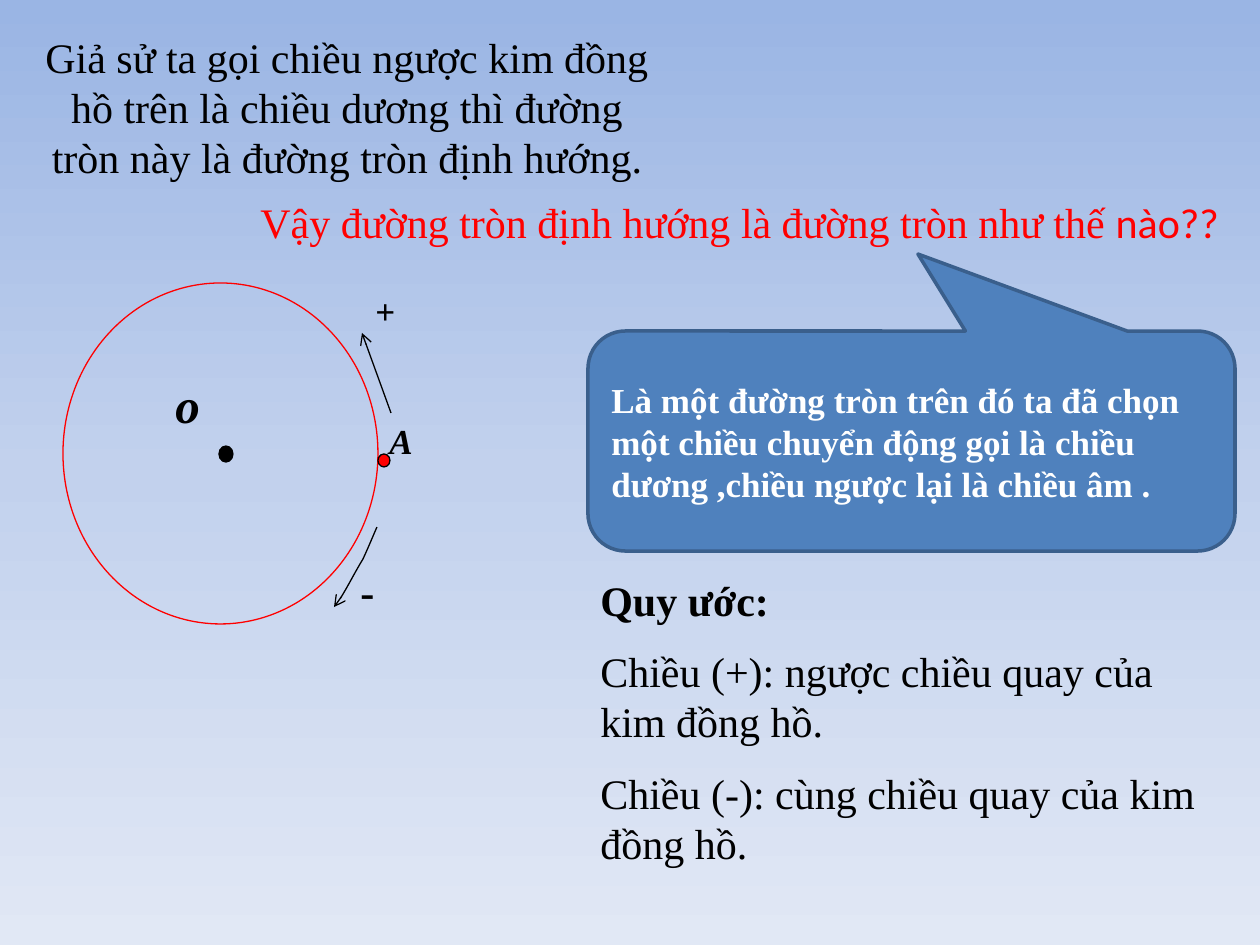
from copy import deepcopy

from pptx import Presentation
from pptx.dml.color import RGBColor
from pptx.enum.shapes import MSO_CONNECTOR, MSO_SHAPE as SHAPE
from pptx.enum.text import MSO_ANCHOR, PP_ALIGN as ALIGN
from pptx.oxml.ns import qn
from pptx.util import Emu, Pt
from lxml.etree import SubElement

SCALE = 914400 / 126  # EMU in one px
SERIF = "Times New Roman"


def color(hex_value):
    return RGBColor.from_string(hex_value)


def write(shape, paragraphs, align=ALIGN.LEFT):
    """Each paragraph is a list of runs: (text, size, color, bold, italic, font)."""
    frame = shape.text_frame
    frame.word_wrap = True
    for index, runs in enumerate(paragraphs):
        paragraph = frame.paragraphs[0] if index == 0 else frame.add_paragraph()
        paragraph.alignment = align
        if index:
            paragraph.space_before = Pt(runs[0][1] / 2)
        for text, size, hex_value, bold, italic, font_name in runs:
            run = paragraph.add_run()
            run.text = text
            run.font.size = Pt(size)
            run.font.name = font_name
            run.font.bold, run.font.italic = bold, italic
            run.font.color.rgb = color(hex_value)


presentation = Presentation()
presentation.slide_width = Emu(round(1260 * SCALE))
presentation.slide_height = Emu(round(945 * SCALE))
slide = presentation.slides.add_slide(presentation.slide_layouts[6])

# Background: three-stop gradient from top to bottom
background = slide.background.fill
background.gradient()
background.gradient_angle = 270
stop_list = slide.element.find(".//" + qn("a:gsLst"))
stop_list.insert(1, deepcopy(stop_list[0]))
for stop, position, hex_value in zip(background.gradient_stops, (0, 0.5, 1),
                                     ("9AB5E4", "C2D1ED", "E1E8F5")):
    stop.position = position
    stop.color.rgb = color(hex_value)

# Callout with the definition
callout = slide.shapes.add_shape(SHAPE.ROUNDED_RECTANGULAR_CALLOUT,
                                 *[Emu(round(v * SCALE)) for v in (588, 331, 647, 220)])
for index, value in enumerate((0.01, -0.85, 0.17)):
    callout.adjustments[index] = value
callout.shadow.inherit = False
callout.fill.solid()
callout.fill.fore_color.rgb = color("4F81BD")
callout.line.color.rgb = color("3A5F8C")
callout.line.width = Pt(2)
callout.text_frame.vertical_anchor = MSO_ANCHOR.MIDDLE
write(callout, [[("Là một đường tròn trên đó ta đã chọn một chiều chuyển động gọi là "
                  "chiều dương ,chiều ngược lại là chiều âm .",
                  20, "FFFFFF", True, False, SERIF)]])

# Circle, point A and centre
diagram = slide.shapes.add_group_shape().shapes
for box, fill, line in (
    ((63, 283, 315, 341), None, "FF0000"),
    ((378, 454, 12, 13), "FF0000", "000000"),
    ((219, 446, 14, 16), "000000", "000000"),
):
    ellipse = diagram.add_shape(SHAPE.OVAL, *[Emu(round(v * SCALE)) for v in box])
    ellipse.shadow.inherit = False
    if fill:
        ellipse.fill.solid()
        ellipse.fill.fore_color.rgb = color(fill)
    else:
        ellipse.fill.background()
    ellipse.line.color.rgb = color(line)
    ellipse.line.width = Pt(0.75)

# Positive direction: straight arrow
plus_arrow = diagram.add_connector(MSO_CONNECTOR.STRAIGHT,
                                   *[Emu(round(v * SCALE)) for v in (391, 413, 362, 333)])
SubElement(plus_arrow._element.spPr, qn("a:effectLst"))

# Negative direction: every three points become one curve segment
builder = diagram.build_freeform(377, 527, SCALE)
builder.add_line_segments([(373, 536), (369, 546), (363, 559),
                           (355, 572), (341, 600), (334, 607)], close=False)
minus_arrow = builder.convert_to_shape()
minus_arrow.shadow.inherit = False
minus_arrow.fill.background()
outline = minus_arrow._element.find(".//" + qn("a:path"))
segments = outline.findall(qn("a:lnTo"))
for start in range(0, len(segments), 3):
    curve = SubElement(outline, qn("a:cubicBezTo"))
    for segment in segments[start:start + 3]:
        curve.append(segment[0])
        outline.remove(segment)

for arrow in (plus_arrow, minus_arrow):
    arrow.line.color.rgb = color("000000")
    arrow.line.width = Pt(0.75)
    SubElement(arrow.line._get_or_add_ln(), qn("a:tailEnd"), type="arrow")

# Diagram labels
for text, box, size, italic in (
    ("A", (377, 413, 86, 84), 20, True),
    ("+", (363, 283, 72, 84), 20, False),
    ("-", (348, 559, 57, 97), 24, False),
    ("o", (163, 368, 86, 111), 28, True),
):
    label = diagram.add_textbox(*[Emu(round(v * SCALE)) for v in box])
    write(label, [[(text, size, "000000", True, italic, SERIF)]])

# Statement, question and convention
for box, align, paragraphs in (
    ((32, 25, 630, 165), ALIGN.CENTER, [
        [("Giả sử ta gọi chiều ngược kim đồng hồ trên là chiều dương thì đường "
          "tròn này là đường tròn định hướng.", 24, "000000", False, False, SERIF)]]),
    ((248, 190, 1002, 63), ALIGN.LEFT, [
        [("Vậy đường tròn định hướng là đường tròn như thế ",
          24, "FF0000", False, False, SERIF),
         ("nào??", 24, "FF0000", False, False, "Calibri")]]),
    ((588, 568, 630, 394), ALIGN.LEFT, [
        [("Quy ước:", 24, "000000", True, False, SERIF)],
        [("Chiều (+): ngược chiều quay của kim đồng hồ.",
          24, "000000", False, False, SERIF)],
        [("Chiều (-): cùng chiều quay của kim đồng hồ.",
          24, "000000", False, False, SERIF)]]),
):
    text_box = slide.shapes.add_textbox(*[Emu(round(v * SCALE)) for v in box])
    write(text_box, paragraphs, align)

presentation.save("out.pptx")
